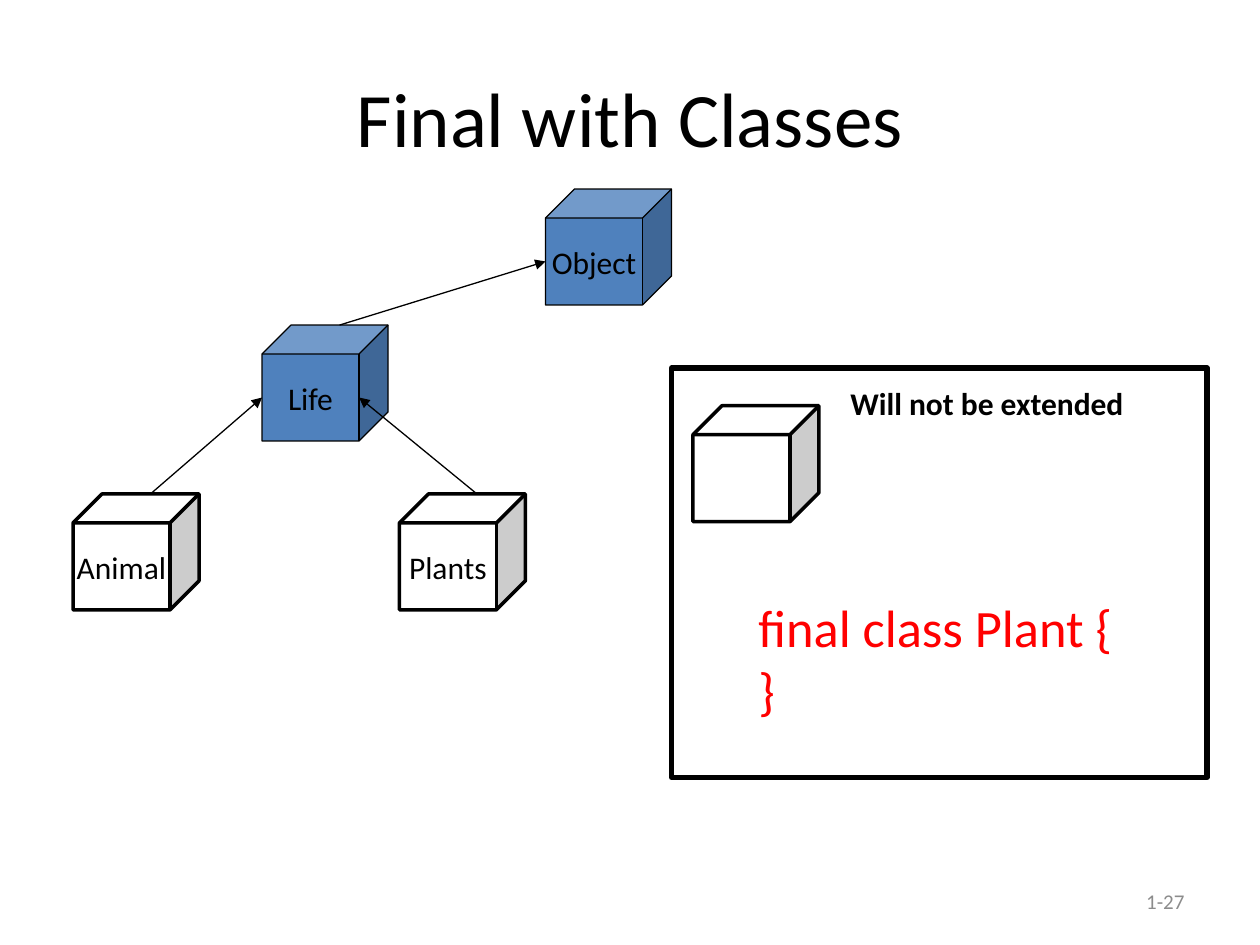
from dataclasses import dataclass

from lxml import etree
from pptx import Presentation
from pptx.dml.color import RGBColor
from pptx.enum.shapes import MSO_CONNECTOR, MSO_SHAPE
from pptx.enum.text import MSO_ANCHOR, MSO_AUTO_SIZE, PP_ALIGN
from pptx.oxml.ns import qn
from pptx.util import Inches, Pt

CUBE, RECT = MSO_SHAPE.CUBE, MSO_SHAPE.RECTANGLE
LINE = MSO_CONNECTOR.STRAIGHT
LEFT, MID, RIGHT = PP_ALIGN.LEFT, PP_ALIGN.CENTER, PP_ALIGN.RIGHT
TOP, CENTER = MSO_ANCHOR.TOP, MSO_ANCHOR.MIDDLE
GROW, FIXED = MSO_AUTO_SIZE.SHAPE_TO_FIT_TEXT, MSO_AUTO_SIZE.NONE


@dataclass(frozen=True)
class Theme:
    font: str = "Calibri"
    black: str = "000000"
    white: str = "FFFFFF"
    blue: str = "4F81BD"
    red: str = "FF0000"
    gray: str = "8C8C8C"
    title: int = 44
    code: int = 30
    label: int = 18
    foot: int = 12
    thin: float = 0.75
    bold: float = 2
    frame: float = 3


THEME = Theme()
WIDE, HIGH, RATIO = 1, 0.92, 0.25
DEPTH = RATIO * HIGH


def rgb(color):
    return RGBColor.from_string(color)


def write(shape, text, size=THEME.label, color=THEME.black, bold=False,
          align=LEFT, anchor=TOP, wrap=False, fit=FIXED):
    frame = shape.text_frame
    frame.text = text
    frame.word_wrap = wrap
    frame.auto_size = fit
    frame.vertical_anchor = anchor
    for para in frame.paragraphs:
        para.alignment = align
        for run in para.runs:
            font = run.font
            font.name, font.size, font.bold = THEME.font, Pt(size), bold
            font.color.rgb = rgb(color)


def place(shape, *box):
    shape.left, shape.top, shape.width, shape.height = map(Inches, box)


def add_text(slide, box, text, **style):
    write(slide.shapes.add_textbox(*map(Inches, box)), text, **style)


def add_form(slide, kind, box, fill, width):
    shape = slide.shapes.add_shape(kind, *map(Inches, box))
    shape.shadow.inherit = False
    if fill:
        shape.fill.solid()
        shape.fill.fore_color.rgb = rgb(fill)
    else:
        shape.fill.background()
    shape.line.color.rgb = rgb(THEME.black)
    shape.line.width = Pt(width)
    return shape


def add_cube(slide, spot, fill, width, label=None):
    cube = add_form(slide, CUBE, (*spot, WIDE, HIGH), fill, width)
    cube.adjustments[0] = RATIO
    if label:
        write(cube, label, align=MID, anchor=CENTER)


def top_of(spot):
    return spot[0] + (WIDE + DEPTH) / 2, spot[1]


def left_of(spot):
    return spot[0], spot[1] + (HIGH + DEPTH) / 2


def right_of(spot):
    return spot[0] + WIDE - DEPTH, left_of(spot)[1]


def add_arrow(slide, start, end):
    arrow = slide.shapes.add_connector(LINE, *map(Inches, (*start, *end)))
    arrow.line.color.rgb = rgb(THEME.black)
    arrow.line.width = Pt(THEME.thin)
    tip = etree.SubElement(arrow.line._get_or_add_ln(), qn("a:tailEnd"))
    tip.set("type", "triangle")
    etree.SubElement(arrow._element.spPr, qn("a:effectLst"))


def main():
    deck = Presentation()
    deck.slide_width, deck.slide_height = Inches(10), Inches(7.5)
    slide = deck.slides.add_slide(deck.slide_layouts[5])

    title = slide.shapes.title
    place(title, 0.5, 0.3, 9, 1.25)
    write(title, "Final with Classes", size=THEME.title, align=MID,
          anchor=CENTER, wrap=True)
    add_text(slide, (7.17, 6.95, 2.33, 0.4), "1-27", size=THEME.foot,
             color=THEME.gray, align=RIGHT, anchor=CENTER, wrap=True)

    root, life = (4.33, 1.5), (2.08, 2.58)
    animal, plants = (0.58, 3.92), (3.17, 3.92)
    for spot, label in ((root, "Object"), (life, "Life")):
        add_cube(slide, spot, THEME.blue, THEME.thin, label)
    for spot, label in ((animal, "Animal"), (plants, "Plants")):
        add_cube(slide, spot, THEME.white, THEME.bold, label)
    add_arrow(slide, top_of(animal), left_of(life))
    add_arrow(slide, top_of(plants), right_of(life))
    add_arrow(slide, top_of(life), left_of(root))

    add_text(slide, (6.65, 3, 2.39, 0.4), "Will not be extended",
             bold=True, fit=GROW)
    add_form(slide, RECT, (5.33, 2.92, 4.25, 3.25), None, THEME.frame)
    add_cube(slide, (5.5, 3.22), THEME.white, THEME.bold)
    add_text(slide, (5.92, 4.67, 3.18, 1.11), "final class Plant {\n}",
             size=THEME.code, color=THEME.red, fit=GROW)

    deck.save("out.pptx")


if __name__ == "__main__":
    main()
